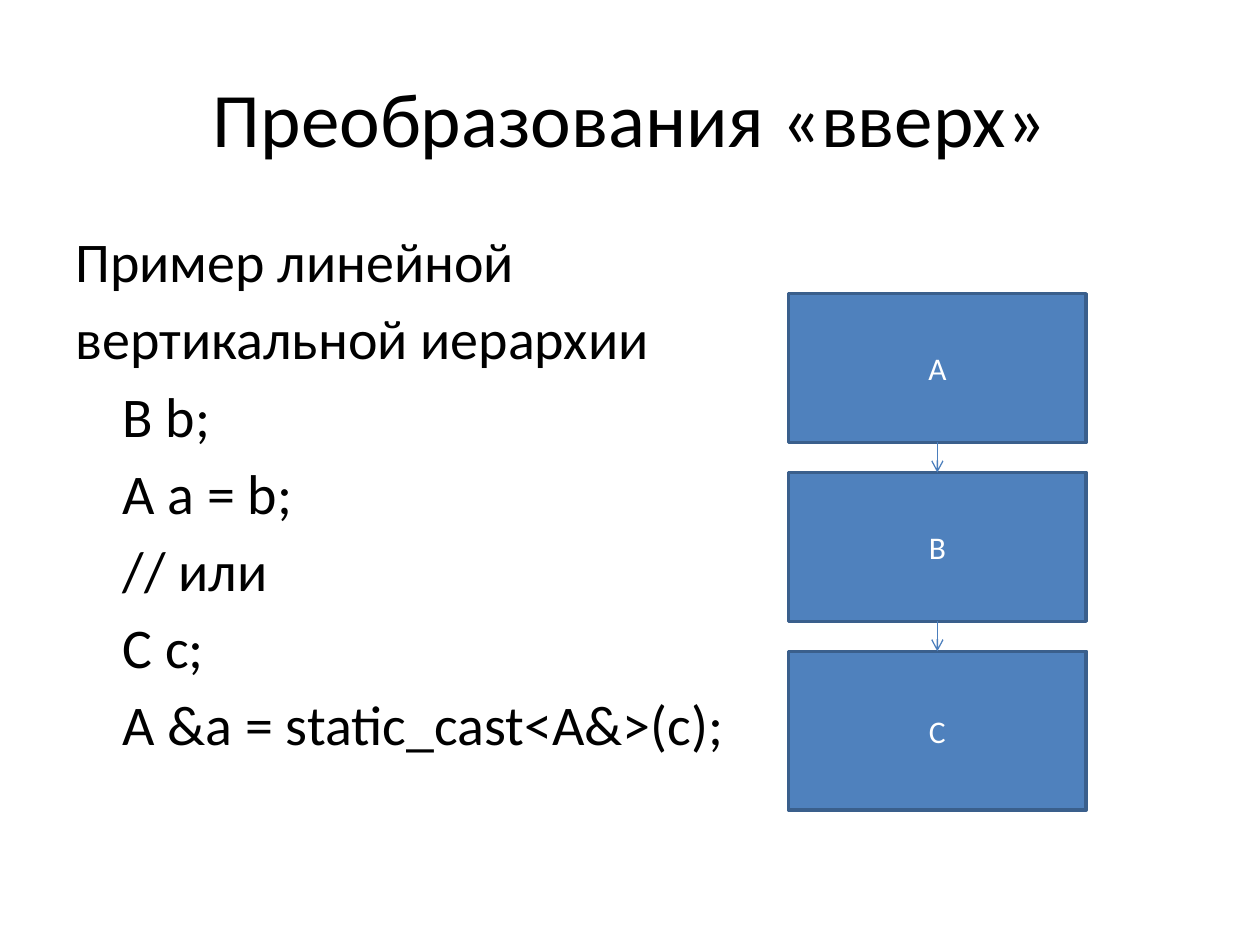
from itertools import pairwise

from lxml import etree
from pptx import Presentation
from pptx.dml.color import RGBColor
from pptx.enum.shapes import MSO_CONNECTOR, MSO_SHAPE
from pptx.enum.text import MSO_ANCHOR, PP_ALIGN
from pptx.oxml.ns import qn
from pptx.util import Pt

PROCESS, RECTANGLE = MSO_SHAPE.FLOWCHART_PROCESS, MSO_SHAPE.RECTANGLE
STRAIGHT = MSO_CONNECTOR.STRAIGHT
TOP, MIDDLE = MSO_ANCHOR.TOP, MSO_ANCHOR.MIDDLE
LEFT, CENTER = PP_ALIGN.LEFT, PP_ALIGN.CENTER
TOP_SITE, BOTTOM_SITE = 0, 2

TITLE = "Преобразования «вверх»"
INTRO = ["Пример линейной", "вертикальной иерархии"]
CODE = ["B b;", "A a = b;", "// или", "C c;", "A &a = static_cast<A&>(c);"]
# Class name, outline, height
HIERARCHY = [("A", PROCESS, 85), ("B", PROCESS, 85), ("С", RECTANGLE, 90.7)]

THEME = {
    "font": "Calibri",
    "title_size": 44, "body_size": 32, "class_size": 18,
    "text": RGBColor(0x00, 0x00, 0x00),
    "class_text": RGBColor(0xFF, 0xFF, 0xFF),
    "fill": RGBColor(0x4F, 0x81, 0xBD),
    "outline": RGBColor(0x3A, 0x5F, 0x8C),
    "arrow": RGBColor(0x4B, 0x7E, 0xBC),
}

MARGIN, CONTENT_WIDTH = 36, 648
TITLE_TOP, TITLE_HEIGHT = 21.6, 90
BODY_TOP, BODY_HEIGHT = 126, 356.4
CODE_INDENT, LINE_GAP = 27, 5.7
CLASS_LEFT, CLASS_TOP, CLASS_WIDTH, CLASS_GAP = 450.6, 167.8, 170.1, 17.2


def write(paragraph, text, size, color, align):
    paragraph.alignment = align
    run = paragraph.add_run()
    run.text = text
    run.font.name = THEME["font"]
    run.font.size = Pt(size)
    run.font.color.rgb = color


def add_text_frame(slide, top, height, anchor):
    box = slide.shapes.add_textbox(Pt(MARGIN), Pt(top), Pt(CONTENT_WIDTH), Pt(height))
    frame = box.text_frame
    frame.word_wrap = True
    frame.vertical_anchor = anchor
    return frame


def add_title(slide):
    frame = add_text_frame(slide, TITLE_TOP, TITLE_HEIGHT, MIDDLE)
    write(frame.paragraphs[0], TITLE, THEME["title_size"], THEME["text"], CENTER)


def add_body(slide):
    frame = add_text_frame(slide, BODY_TOP, BODY_HEIGHT, TOP)
    lines = [(text, 0) for text in INTRO] + [(text, CODE_INDENT) for text in CODE]
    for number, (text, indent) in enumerate(lines):
        paragraph = frame.add_paragraph() if number else frame.paragraphs[0]
        paragraph.space_before = Pt(LINE_GAP)
        paragraph._p.get_or_add_pPr().set("marL", str(Pt(indent)))
        write(paragraph, text, THEME["body_size"], THEME["text"], LEFT)


def add_class(slide, name, outline, top, height):
    box = slide.shapes.add_shape(
        outline, Pt(CLASS_LEFT), Pt(top), Pt(CLASS_WIDTH), Pt(height))
    box.shadow.inherit = False
    box.fill.solid()
    box.fill.fore_color.rgb = THEME["fill"]
    box.line.color.rgb = THEME["outline"]
    box.line.width = Pt(2)
    box.text_frame.vertical_anchor = MIDDLE
    write(box.text_frame.paragraphs[0], name,
          THEME["class_size"], THEME["class_text"], CENTER)
    return box


def add_arrow(slide, upper, lower):
    arrow = slide.shapes.add_connector(STRAIGHT, 0, 0, 0, 0)
    arrow.begin_connect(upper, BOTTOM_SITE)
    arrow.end_connect(lower, TOP_SITE)
    arrow.line.color.rgb = THEME["arrow"]
    arrow.line.width = Pt(0.75)
    etree.SubElement(arrow.line._get_or_add_ln(), qn("a:tailEnd"), type="arrow")
    etree.SubElement(arrow._element.spPr, qn("a:effectLst"))


def add_hierarchy(slide):
    boxes, top = [], CLASS_TOP
    for name, outline, height in HIERARCHY:
        boxes.append(add_class(slide, name, outline, top, height))
        top += height + CLASS_GAP
    for upper, lower in pairwise(boxes):
        add_arrow(slide, upper, lower)


def main():
    presentation = Presentation()
    presentation.slide_width, presentation.slide_height = Pt(720), Pt(540)
    slide = presentation.slides.add_slide(presentation.slide_layouts[6])
    add_title(slide)
    add_body(slide)
    add_hierarchy(slide)
    presentation.save("out.pptx")


if __name__ == "__main__":
    main()
